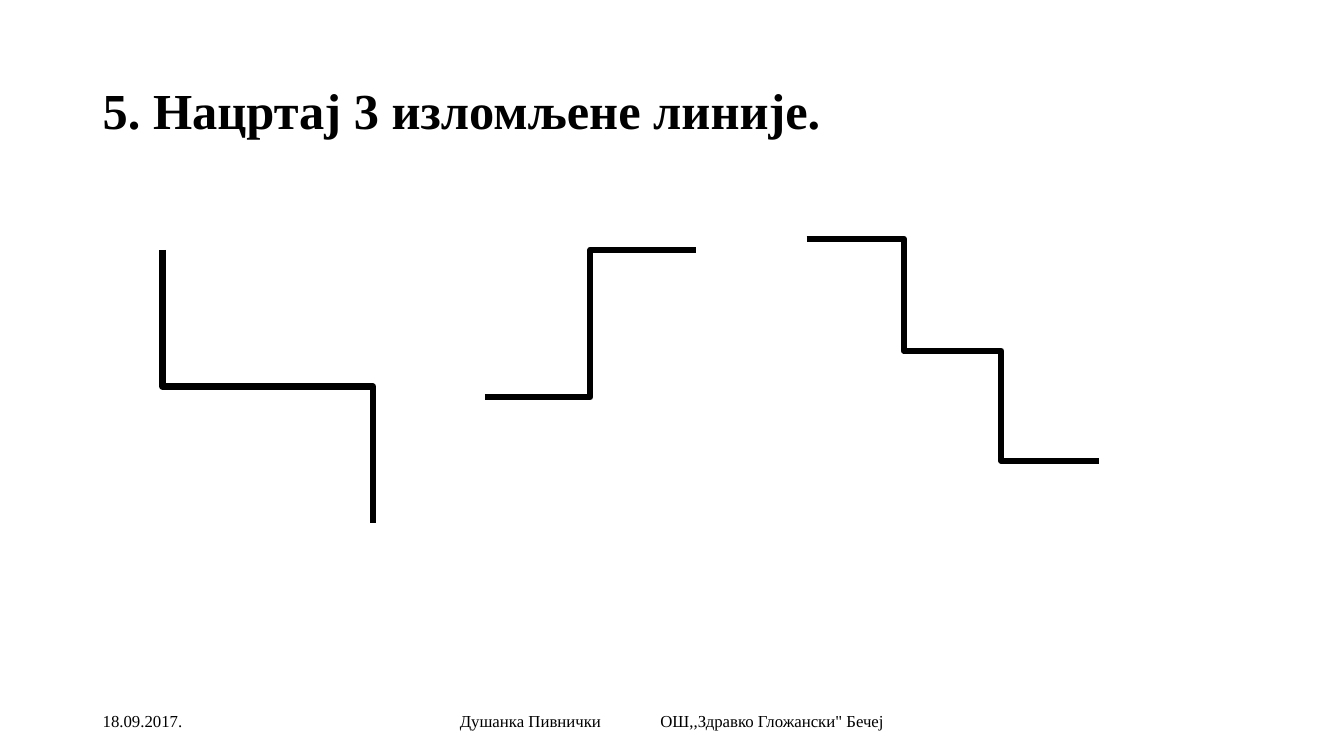
from dataclasses import dataclass

from lxml.etree import SubElement
from pptx import Presentation
from pptx.dml.color import RGBColor
from pptx.enum.shapes import MSO_CONNECTOR
from pptx.enum.text import MSO_ANCHOR
from pptx.oxml.ns import qn
from pptx.slide import Slide
from pptx.util import Inches, Pt


@dataclass(frozen=True)
class Theme:
    font: str = "Times New Roman"
    ink: RGBColor = RGBColor(0, 0, 0)
    paper: RGBColor = RGBColor(255, 255, 255)
    title: float = 36
    footer: float = 12
    stroke: float = 4.5


@dataclass(frozen=True)
class Label:
    text: str
    left: float
    top: float
    width: float
    height: float
    size: float
    bold: bool = False
    spacing: float = 1.0
    inset: float = 0.1
    tab: float = 0


@dataclass(frozen=True)
class Bend:
    start: tuple[float, float]
    end: tuple[float, float]
    upright: bool = False  # first and last legs are vertical


THEME = Theme()

LABELS = [
    Label("5. Нацртај 3 изломљене линије.", 0.92, 0.4, 11.5, 1.45,
          THEME.title, bold=True, spacing=0.9),
    Label("18.09.2017.", 0.92, 6.95, 3, 0.4, THEME.footer),
    Label("Душанка Пивнички\tОШ,,Здравко Гложански\" Бечеј",
          4.42, 6.95, 4.5, 0.4, THEME.footer, inset=0.14, tab=1.99),
]

# The last two bends overlap and form one staircase
BENDS = [
    Bend((1.61, 2.48), (3.7, 5.19), upright=True),
    Bend((4.81, 3.94), (6.9, 2.48)),
    Bend((8, 2.37), (9.93, 3.48)),
    Bend((8.96, 3.48), (10.9, 4.57)),
]


def add_label(slide: Slide, label: Label) -> None:
    box = slide.shapes.add_textbox(Inches(label.left), Inches(label.top),
                                   Inches(label.width), Inches(label.height))
    frame = box.text_frame
    frame.word_wrap = True
    frame.vertical_anchor = MSO_ANCHOR.MIDDLE
    frame.margin_left = Inches(label.inset)
    frame.text = label.text
    para = frame.paragraphs[0]
    para.line_spacing = label.spacing
    if label.tab:
        stops = SubElement(para._p.get_or_add_pPr(), qn("a:tabLst"))
        SubElement(stops, qn("a:tab"), pos=str(Inches(label.tab)), algn="l")
    for run in para.runs:
        run.font.name = THEME.font
        run.font.size = Pt(label.size)
        run.font.bold = label.bold
        run.font.color.rgb = THEME.ink


def add_bend(slide: Slide, bend: Bend) -> None:
    (x1, y1), (x2, y2) = bend.start, bend.end
    if bend.upright:
        # Swap the axes about the centre; the quarter turn below restores them
        mid_x, mid_y = (x1 + x2) / 2, (y1 + y2) / 2
        half_x, half_y = (x2 - x1) / 2, (y2 - y1) / 2
        x1, x2 = mid_x + half_y, mid_x - half_y
        y1, y2 = mid_y - half_x, mid_y + half_x
    line = slide.shapes.add_connector(MSO_CONNECTOR.ELBOW, Inches(x1),
                                      Inches(y1), Inches(x2), Inches(y2))
    line.line.color.rgb = THEME.ink
    line.line.width = Pt(THEME.stroke)
    props = line._element.spPr
    SubElement(props, qn("a:effectLst"))
    if bend.upright:
        props.find(qn("a:xfrm")).set("rot", str(270 * 60000))


def main() -> None:
    deck = Presentation()
    deck.slide_width, deck.slide_height = Inches(13.33), Inches(7.5)
    slide = deck.slides.add_slide(deck.slide_layouts[6])
    slide.background.fill.solid()
    slide.background.fill.fore_color.rgb = THEME.paper

    # Title and footer
    for label in LABELS:
        add_label(slide, label)

    # Broken lines
    for bend in BENDS:
        add_bend(slide, bend)

    deck.save("out.pptx")


if __name__ == "__main__":
    main()
